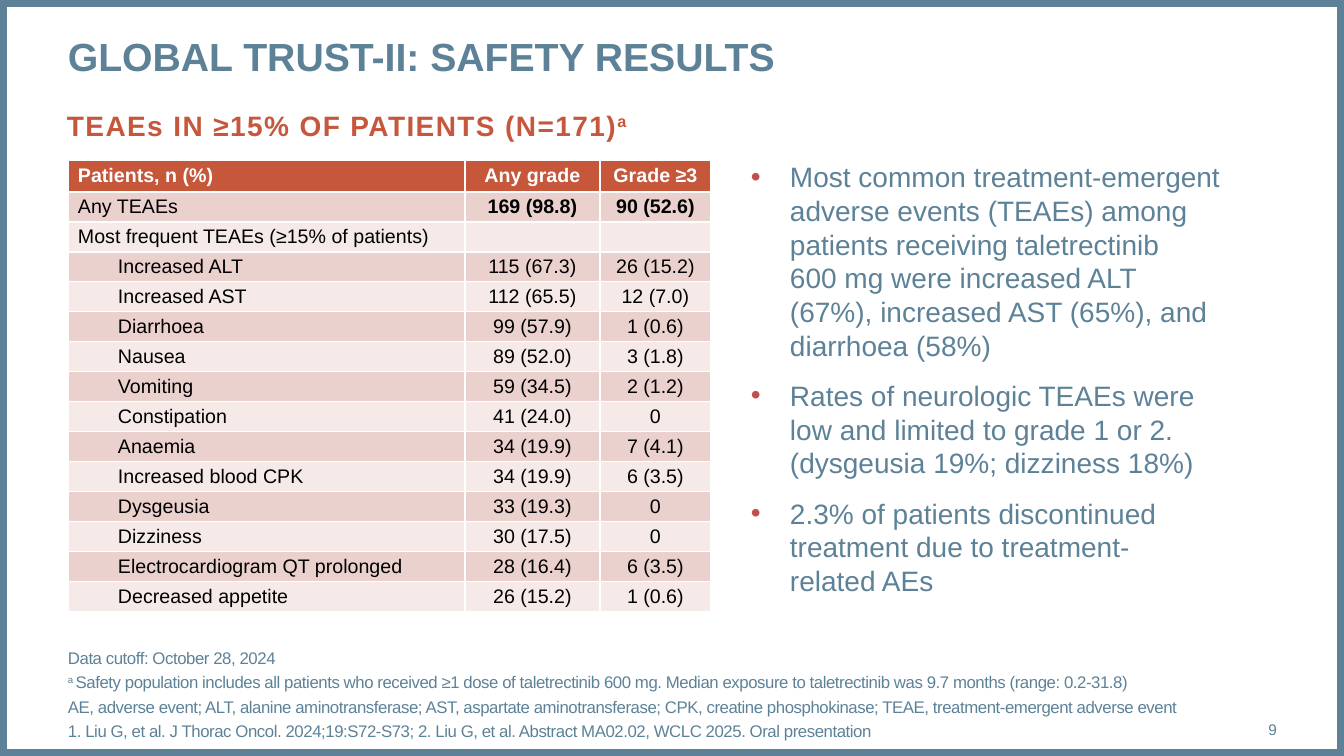
from pptx import Presentation
from pptx.dml.color import RGBColor as RGB
from pptx.enum.shapes import MSO_SHAPE as SHAPE
from pptx.enum.text import MSO_ANCHOR as ANCHOR, PP_ALIGN as ALIGN
from pptx.oxml.ns import qn
from pptx.util import Pt
from lxml.etree import SubElement

FONT = "Arial"
COLORS = {
    "slate": "5D8298", "rust": "C7573C", "head": "C6573B", "dot": "C0504D",
    "odd": "EAD1CE", "even": "F5EAE8", "white": "FFFFFF", "black": "000000",
}
TITLE = "GLOBAL TRUST-II: SAFETY RESULTS"
SUBHEAD = "TEAEs IN ≥15% OF PATIENTS (N=171)^a"
POINTS = [
    "Most common treatment-emergent adverse events (TEAEs) among patients receiving "
    "taletrectinib \n600 mg were increased ALT (67%), increased AST (65%), and \n"
    "diarrhoea (58%)",
    "Rates of neurologic TEAEs were low and limited to grade 1 or 2. "
    "(dysgeusia 19%; dizziness 18%)",
    "2.3% of patients discontinued treatment due to treatment-\nrelated AEs",
]
NOTES = [
    "Data cutoff: October 28, 2024",
    "^a ^Safety population includes all patients who received ≥1 dose of taletrectinib "
    "600 mg. Median exposure to taletrectinib was 9.7 months (range: 0.2-31.8)",
    "AE, adverse event; ALT, alanine aminotransferase; AST, aspartate aminotransferase; "
    "CPK, creatine phosphokinase; TEAE, treatment-emergent adverse event",
    "1. Liu G, et al. J Thorac Oncol. 2024;19:S72-S73; 2. Liu G, et al. Abstract "
    "MA02.02, WCLC 2025. Oral presentation",
]
ROWS = [
    ("Patients, n (%)", "Any grade", "Grade ≥3"),
    ("Any TEAEs", "169 (98.8)", "90 (52.6)"),
    ("Most frequent TEAEs (≥15% of patients)", "", ""),
    ("Increased ALT", "115 (67.3)", "26 (15.2)"),
    ("Increased AST", "112 (65.5)", "12 (7.0)"),
    ("Diarrhoea", "99 (57.9)", "1 (0.6)"),
    ("Nausea", "89 (52.0)", "3 (1.8)"),
    ("Vomiting", "59 (34.5)", "2 (1.2)"),
    ("Constipation", "41 (24.0)", "0"),
    ("Anaemia", "34 (19.9)", "7 (4.1)"),
    ("Increased blood CPK", "34 (19.9)", "6 (3.5)"),
    ("Dysgeusia", "33 (19.3)", "0"),
    ("Dizziness", "30 (17.5)", "0"),
    ("Electrocardiogram QT prolonged", "28 (16.4)", "6 (3.5)"),
    ("Decreased appetite", "26 (15.2)", "1 (0.6)"),
]
COLS = [397, 135, 111]
FIRST_EVENT = 3


def px(n):
    return round(n * 914400 / 100.8)


def rgb(name):
    return RGB.from_string(COLORS[name])


def style(para, size, color, bold=False):
    font = para.font
    font.name, font.size, font.bold = FONT, Pt(size), bold
    font.color.rgb = rgb(color)


def fill_para(para, text, track):
    """Writes text with ^ around raised parts; track is in hundredths of a point."""
    for i, part in enumerate(text.split("^")):
        for j, bit in enumerate(part.split("\n")):
            if j:
                para.add_line_break()
            if not bit:
                continue
            run = para.add_run()
            run.text = bit
            props = run._r.get_or_add_rPr()
            if track:
                props.set("spc", str(track))
            if i % 2:
                props.set("baseline", "30000")


def add_dot(para):
    props = para._p.get_or_add_pPr()
    props.set("marL", str(px(39)))
    props.set("indent", str(-px(39)))
    tint = SubElement(props, qn("a:buClr"))
    SubElement(tint, qn("a:srgbClr"), val=COLORS["dot"])
    SubElement(props, qn("a:buFont"), typeface=FONT)
    SubElement(props, qn("a:buChar"), char="•")


def add_text(slide, box, lines, size, color="slate", bold=False, track=0, gap=0,
             pitch=None, dots=False, anchor=ANCHOR.TOP, align=ALIGN.LEFT):
    frame = slide.shapes.add_textbox(*map(px, box)).text_frame
    frame.word_wrap = True
    frame.vertical_anchor = anchor
    frame.margin_left = frame.margin_right = frame.margin_top = frame.margin_bottom = 0
    for i, line in enumerate(lines):
        para = frame.add_paragraph() if i else frame.paragraphs[0]
        fill_para(para, line, track)
        if dots:
            add_dot(para)
        para.alignment = align
        if pitch:
            para.line_spacing = pitch
        if i:
            para.space_before = Pt(gap)
        style(para, size, color, bold)


def add_border(slide, box):
    rect = slide.shapes.add_shape(SHAPE.RECTANGLE, *map(px, box))
    rect.shadow.inherit = False
    rect.fill.background()
    rect.line.color.rgb = rgb("slate")
    rect.line.width = Pt(10)


def add_grid(slide, box):
    table = slide.shapes.add_table(len(ROWS), len(COLS), *map(px, box)).table
    for col, width in zip(table.columns, COLS):
        col.width = px(width)
    for r, row in enumerate(ROWS):
        table.rows[r].height = px(30 if r else 32)
        shade = ("odd" if r % 2 else "even") if r else "head"
        for c, text in enumerate(row):
            cell = table.cell(r, c)
            cell.margin_left = cell.margin_right = px(10)
            cell.margin_top = cell.margin_bottom = px(3)
            cell.vertical_anchor = ANCHOR.MIDDLE
            cell.fill.solid()
            cell.fill.fore_color.rgb = rgb(shade)
            para = cell.text_frame.paragraphs[0]
            para.text = text
            para.alignment = ALIGN.CENTER if c else ALIGN.LEFT
            if not text:
                para._p.get_or_add_endParaRPr().set("sz", "1400")
            if r >= FIRST_EVENT and not c:
                para._p.get_or_add_pPr().set("indent", str(px(40)))
            style(para, 14, "black" if r else "white", r == 0 or (r == 1 and c > 0))


def add_safety(slide, box):
    x, y, w, h = box
    add_border(slide, box)
    add_text(slide, (x + 68, y + 28, w - 136, 60), [TITLE], 28, bold=True, pitch=1.1)
    add_text(slide, (x + 67, y + 108, w - 134, 44), [SUBHEAD], 20, "rust", True,
             track=100, pitch=Pt(24))
    add_grid(slide, (x + 68, y + 160, sum(COLS), 452))
    add_text(slide, (x + 751, y + 160, 476, 474), POINTS, 20, gap=12,
             pitch=Pt(24), dots=True)
    add_text(slide, (x + 68, y + h - 113, 1122, 98), NOTES, 12, track=-30, gap=3,
             pitch=Pt(14.4), anchor=ANCHOR.BOTTOM)
    add_text(slide, (x + w - 154, y + h - 47, 87, 40), ["9"], 11,
             anchor=ANCHOR.MIDDLE, align=ALIGN.RIGHT)


def main():
    deck = Presentation()
    deck.slide_width, deck.slide_height = px(1344), px(756)
    slide = deck.slides.add_slide(deck.slide_layouts[6])
    add_safety(slide, (0, 0, 1344, 756))
    deck.save("out.pptx")


if __name__ == "__main__":
    main()
